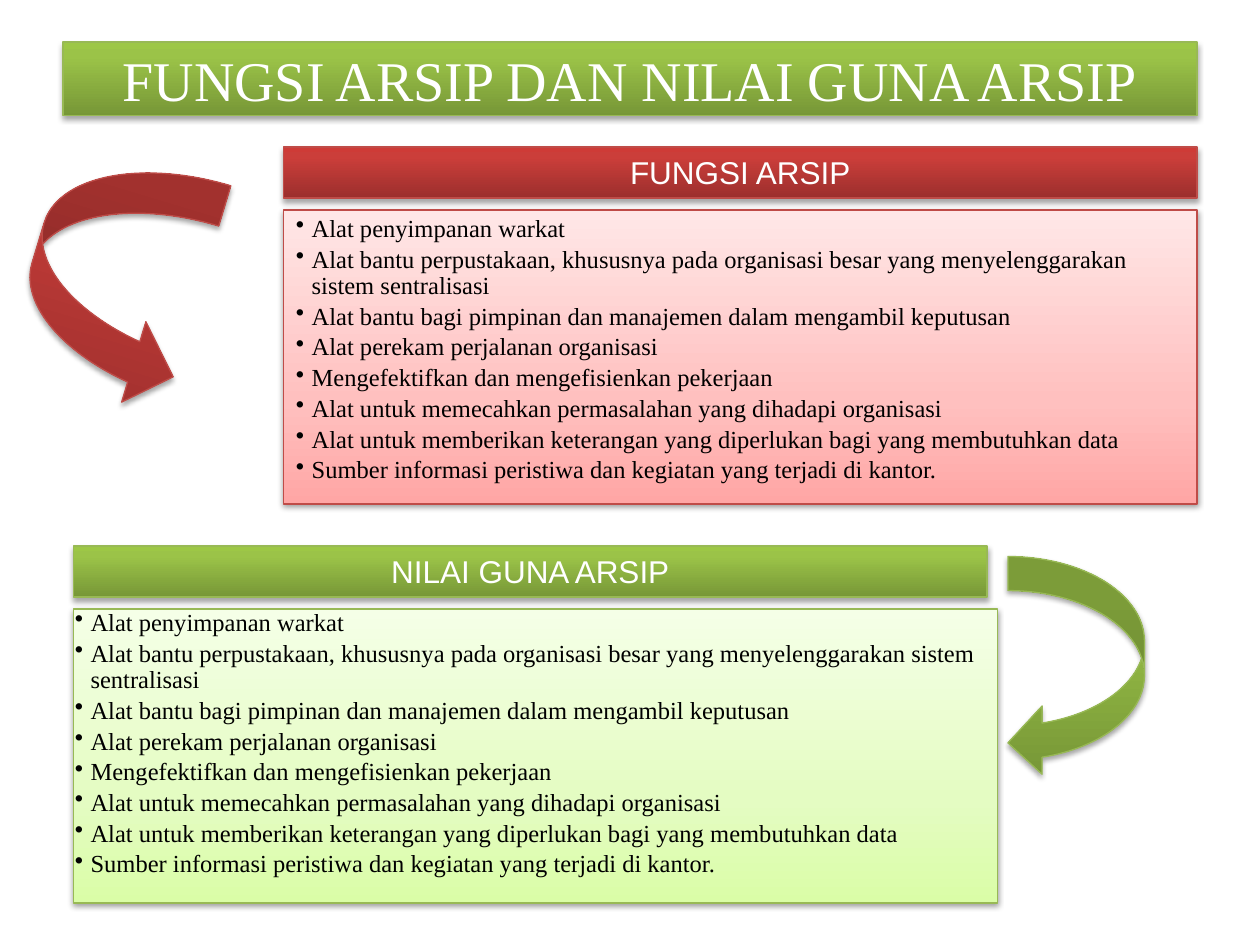
from dataclasses import dataclass

from lxml.etree import SubElement
from pptx import Presentation
from pptx.dml.color import RGBColor
from pptx.enum.shapes import MSO_SHAPE
from pptx.enum.text import MSO_ANCHOR, MSO_AUTO_SIZE, PP_ALIGN
from pptx.oxml.ns import qn
from pptx.util import Inches, Pt


@dataclass(frozen=True)
class Palette:
    line: str
    strong: tuple
    pale: tuple


@dataclass(frozen=True)
class Theme:
    green: Palette = Palette(
        "98B955",
        ((0, "779737"), (80, "9BC348"), (100, "9DC746")),
        ((0, "DAFDA7"), (35, "E4FCC2"), (100, "F5FFE7")),
    )
    red: Palette = Palette(
        "BF4C48",
        ((0, "9C2F2D"), (80, "CB3E3A"), (100, "CE3B37")),
        ((0, "FFA6A5"), (35, "FFC0BF"), (100, "FFE7E7")),
    )
    light: str = "FFFFFF"
    dark: str = "000000"
    serif: str = "Times New Roman"
    sans: str = "Arial"
    title_size: int = 32
    heading_size: int = 18
    body_size: int = 14
    outline: float = 0.75


class ArchiveSlide:
    COLUMNS, ROWS = 120, 90

    def __init__(self, deck, theme):
        self.theme = theme
        self.cell_width = deck.slide_width / self.COLUMNS
        self.cell_height = deck.slide_height / self.ROWS
        self.slide = deck.slides.add_slide(deck.slide_layouts[5])

    def place(self, column, row, columns, rows):
        return (
            round(column * self.cell_width),
            round(row * self.cell_height),
            round(columns * self.cell_width),
            round(rows * self.cell_height),
        )

    def paint(self, shape, stops, line, shadow_alpha=35, shadow_distance=1.8):
        shape.fill.gradient()
        shape.fill.gradient_angle = 90
        properties = shape.element.spPr
        stop_list = properties.find(qn("a:gradFill")).find(qn("a:gsLst"))
        for sample in list(stop_list):
            stop_list.remove(sample)
        for position, color in stops:
            stop = SubElement(stop_list, qn("a:gs"), pos=str(position * 1000))
            SubElement(stop, qn("a:srgbClr"), val=color)
        shape.line.color.rgb = RGBColor.from_string(line)
        shape.line.width = Pt(self.theme.outline)
        shape.shadow.inherit = False
        shadow = SubElement(
            properties.find(qn("a:effectLst")),
            qn("a:outerShdw"),
            blurRad=str(Pt(3.1)),
            dist=str(Pt(shadow_distance)),
            dir="5400000",
            rotWithShape="0",
        )
        tint = SubElement(shadow, qn("a:srgbClr"), val=self.theme.dark)
        SubElement(tint, qn("a:alpha"), val=str(shadow_alpha * 1000))

    def add_words(self, paragraph, words, size, face, color):
        run = paragraph.add_run()
        run.text = words
        run.font.size = Pt(size)
        run.font.name = face
        run.font.color.rgb = RGBColor.from_string(color)

    def title(self, words, area, palette):
        heading = self.slide.shapes.title
        heading.left, heading.top, heading.width, heading.height = self.place(*area)
        self.paint(heading, palette.strong, palette.line)
        frame = heading.text_frame
        frame.auto_size = MSO_AUTO_SIZE.NONE
        frame.vertical_anchor = MSO_ANCHOR.MIDDLE
        paragraph = frame.paragraphs[0]
        paragraph.alignment = PP_ALIGN.CENTER
        self.add_words(paragraph, words, self.theme.title_size, self.theme.serif, self.theme.light)

    def banner(self, words, area, palette):
        banner = self.slide.shapes.add_shape(MSO_SHAPE.RECTANGLE, *self.place(*area))
        self.paint(banner, palette.strong, palette.line)
        frame = banner.text_frame
        frame.word_wrap = True
        frame.vertical_anchor = MSO_ANCHOR.TOP
        paragraph = frame.paragraphs[0]
        paragraph.alignment = PP_ALIGN.CENTER
        self.add_words(paragraph, words, self.theme.heading_size, self.theme.sans, self.theme.light)

    def bullet_panel(self, points, area, palette, inset=None):
        panel = self.slide.shapes.add_shape(MSO_SHAPE.RECTANGLE, *self.place(*area))
        self.paint(panel, palette.pale, palette.line, 38, 1.6)
        frame = panel.text_frame
        frame.word_wrap = True
        frame.vertical_anchor = MSO_ANCHOR.TOP
        if inset is not None:
            frame.margin_left = frame.margin_right = Inches(inset)
            frame.margin_top = frame.margin_bottom = Inches(inset)
        for index, point in enumerate(points):
            paragraph = frame.add_paragraph() if index else frame.paragraphs[0]
            settings = paragraph._p.get_or_add_pPr()
            settings.set("marL", str(Inches(0.125)))
            settings.set("indent", str(-Inches(0.125)))
            SubElement(settings, qn("a:buChar"), char="•")
            paragraph.level = 1
            paragraph.alignment = PP_ALIGN.LEFT
            paragraph.line_spacing = 0.9
            paragraph.space_after = Pt(2.4)
            self.add_words(paragraph, point, self.theme.body_size, self.theme.serif, self.theme.dark)

    def curved_arrow(self, direction, area, palette, rotation=0):
        arrow = self.slide.shapes.add_shape(direction, *self.place(*area))
        arrow.rotation = rotation
        self.paint(arrow, palette.strong, palette.line)


POINTS = (
    "Alat penyimpanan warkat",
    "Alat bantu perpustakaan, khususnya pada organisasi besar yang menyelenggarakan sistem sentralisasi",
    "Alat bantu bagi pimpinan dan manajemen dalam mengambil keputusan",
    "Alat perekam perjalanan organisasi",
    "Mengefektifkan dan mengefisienkan pekerjaan",
    "Alat untuk memecahkan permasalahan yang dihadapi organisasi",
    "Alat untuk memberikan keterangan yang diperlukan bagi yang membutuhkan data",
    "Sumber informasi peristiwa dan kegiatan yang terjadi di kantor.",
)


def main():
    deck = Presentation()
    deck.slide_width, deck.slide_height = Inches(10), Inches(7.5)
    theme = Theme()
    page = ArchiveSlide(deck, theme)
    page.title("FUNGSI ARSIP DAN NILAI GUNA ARSIP", (6, 4, 108, 7), theme.green)
    page.banner("FUNGSI ARSIP", (27, 14, 87, 4.85), theme.red)
    page.bullet_panel(POINTS, (7, 58, 88, 28), theme.green, inset=0.01)
    page.bullet_panel(POINTS, (27, 20, 87, 28), theme.red)
    page.curved_arrow(MSO_SHAPE.CURVED_RIGHT_ARROW, (3, 14.9, 16, 23), theme.red, rotation=16.8)
    page.banner("NILAI GUNA ARSIP", (7, 52, 87, 4.85), theme.green)
    page.curved_arrow(MSO_SHAPE.CURVED_LEFT_ARROW, (96, 53, 13, 21), theme.green)
    deck.save("out.pptx")


if __name__ == "__main__":
    main()
